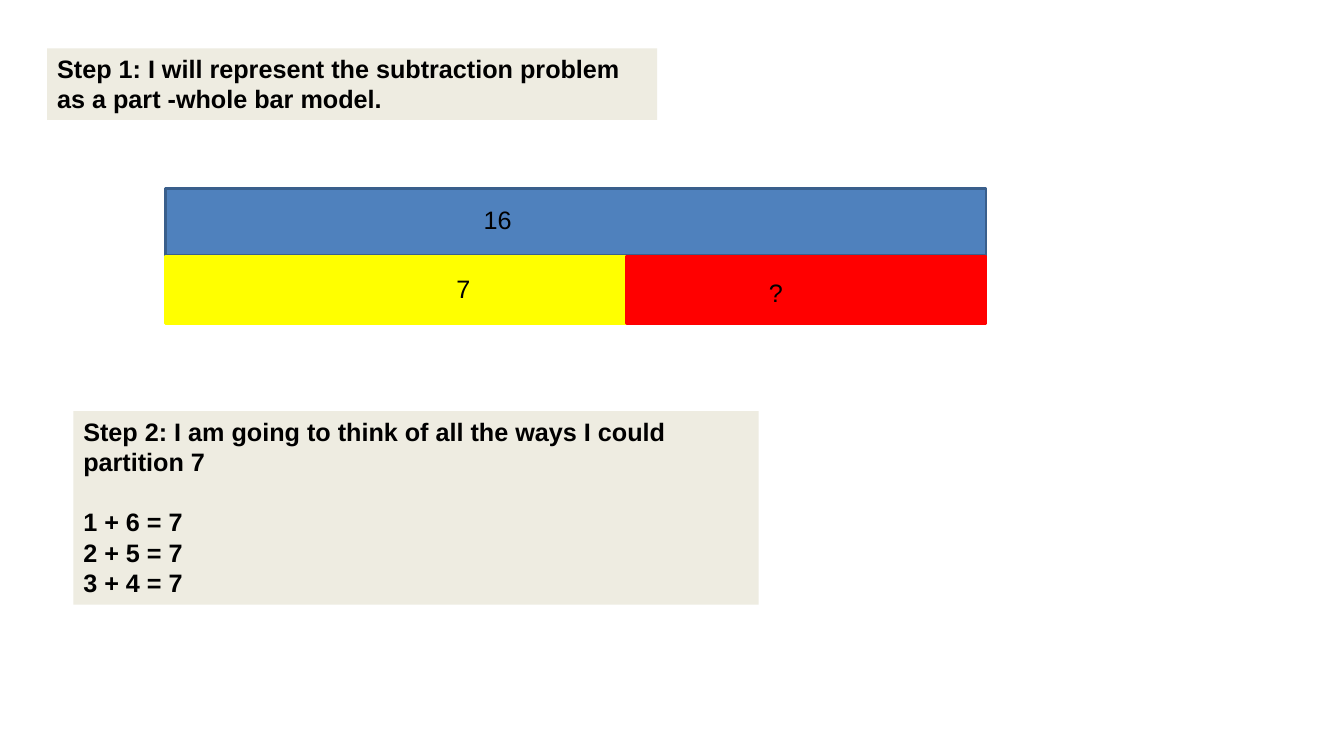
from pptx import Presentation
from pptx.dml.color import RGBColor
from pptx.enum.shapes import MSO_SHAPE
from pptx.enum.text import MSO_AUTO_SIZE
from pptx.util import Cm, Pt

INK = {
    "black": "000000",
    "beige": "EEECE1",
    "blue": "4F81BD",
    "navy": "3A5F8C",
    "yellow": "FFFF00",
    "red": "FF0000",
}

deck = Presentation()
deck.slide_width, deck.slide_height = Cm(33.87), Cm(19.05)
slide = deck.slides.add_slide(deck.slide_layouts[6])


def tint(name):
    return RGBColor.from_string(INK[name])


def write(text, left, top, width, height, bold=False, fill=None, gap=0):
    box = slide.shapes.add_textbox(Cm(left), Cm(top), Cm(width), Cm(height))
    if fill:
        box.fill.solid()
        box.fill.fore_color.rgb = tint(fill)
    frame = box.text_frame
    frame.word_wrap = True
    frame.auto_size = MSO_AUTO_SIZE.SHAPE_TO_FIT_TEXT
    frame.text = text
    for para in frame.paragraphs:
        para.font.name = "Arial"
        para.font.size = Pt(18)
        para.font.bold = bold
        para.font.color.rgb = tint("black")
    if gap:
        frame.paragraphs[1].space_before = Pt(gap)


write("Step 1: I will represent the subtraction problem as a part -whole bar model.",
      1.19, 1.22, 15.37, 1.8, bold=True, fill="beige")

left, top, high = 4.17, 4.75, 1.7
whole, part = 20.68, 11.61
bars = [
    (left, top, whole, "blue", "navy"),
    (left, top + high, part, "yellow", "yellow"),
    (left + part, top + high, whole - part, "red", "red"),
]
for x, y, wide, fill, edge in bars:
    bar = slide.shapes.add_shape(MSO_SHAPE.RECTANGLE, Cm(x), Cm(y), Cm(wide), Cm(high))
    bar.shadow.inherit = False
    bar.fill.solid()
    bar.fill.fore_color.rgb = tint(fill)
    bar.line.color.rgb = tint(edge)
    bar.line.width = Pt(2)

write("16", 11.94, 5.03, 3.25, 1.02)
write("7", 11.25, 6.76, 3.25, 1.02)
write("?", 19.13, 6.86, 1.98, 1.02)

sums = [f"{n} + {7 - n} = 7" for n in range(1, 4)]
write("\n".join(["Step 2: I am going to think of all the ways I could partition 7"] + sums),
      1.85, 10.36, 17.27, 4.88, bold=True, fill="beige", gap=21.6)

deck.save("out.pptx")
